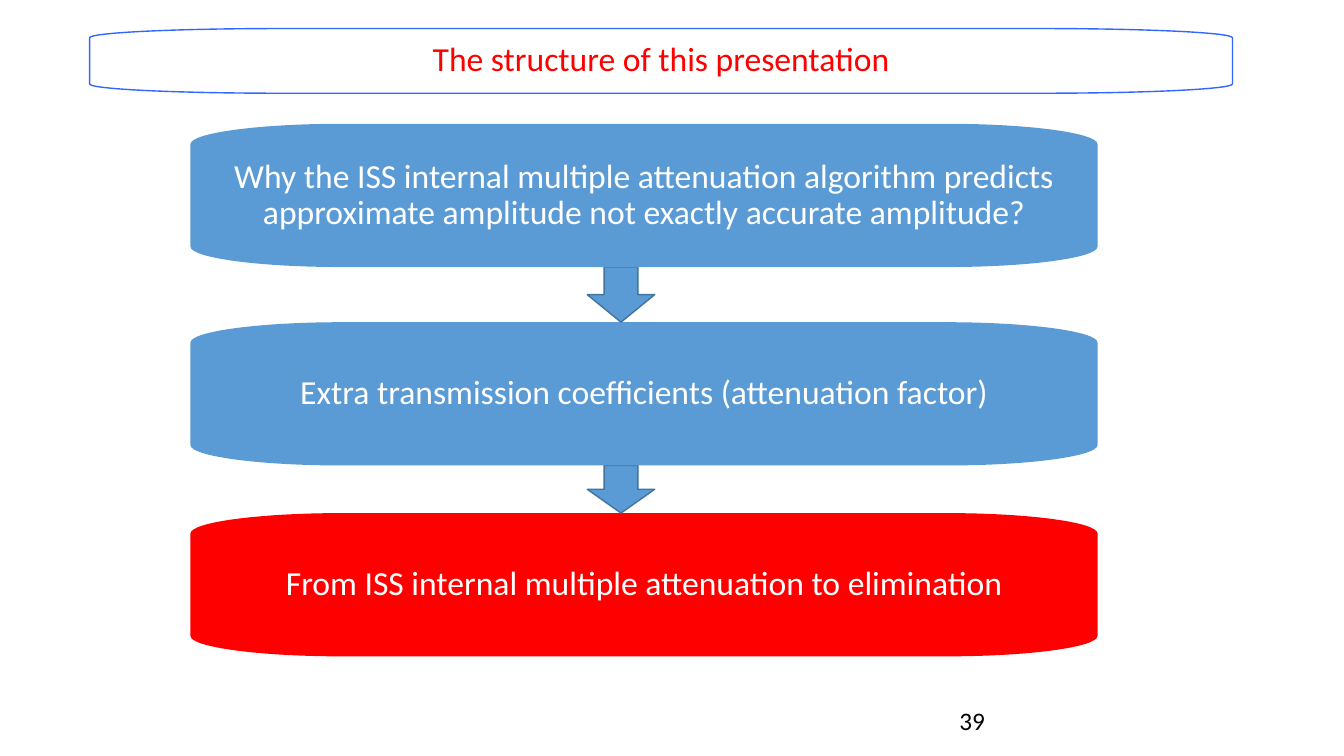
from lxml import etree
from pptx import Presentation
from pptx.dml.color import RGBColor
from pptx.enum import shapes, text
from pptx.oxml import ns
from pptx.util import Cm, Pt

BLUE = RGBColor(0x5B, 0x9B, 0xD5)
EDGE = RGBColor(0x43, 0x73, 0x9E)
FRAME = RGBColor(0x33, 0x66, 0xFF)
RED = RGBColor(0xFF, 0, 0)
WHITE = RGBColor(0xFF, 0xFF, 0xFF)
BLACK = RGBColor(0, 0, 0)

LEFT, WIDTH, HEIGHT = Cm(4.8), Cm(22.86), Cm(3.61)
STEPS = [
    (Cm(3.12), BLUE, "Why the ISS internal multiple attenuation algorithm predicts "
                     "approximate amplitude not exactly accurate amplitude?"),
    (Cm(8.12), BLUE, "Extra transmission coefficients (attenuation factor)"),
    (Cm(12.93), RED, "From ISS internal multiple attenuation to elimination"),
]


def paint(shape, fill, line=None):
    """Set fill and outline, without a shadow."""
    shape.shadow.inherit = False
    shape.fill.solid()
    shape.fill.fore_color.rgb = fill
    if line is None:
        shape.line.fill.background()
    else:
        shape.line.color.rgb = line
        shape.line.width = Pt(1)


def style(para, size, color):
    """Set the font of a paragraph."""
    para.font.name = "Calibri"
    para.font.size = Pt(size)
    para.font.color.rgb = color


def write(shape, words, color):
    """Write one centred paragraph."""
    frame = shape.text_frame
    frame.text = words
    frame.word_wrap = True
    frame.auto_size = text.MSO_AUTO_SIZE.NONE
    frame.vertical_anchor = text.MSO_ANCHOR.MIDDLE
    frame.margin_left = frame.margin_right = Cm(0.38)
    frame.margin_top = frame.margin_bottom = Cm(0.38)
    para = frame.paragraphs[0]
    para.alignment = text.PP_ALIGN.CENTER
    para.line_spacing = 0.9
    style(para, 24, color)


def bend(line, start, corner, end):
    """Turn a straight segment into a quarter ellipse."""
    curve = etree.Element(ns.qn("a:cubicBezTo"))
    pulls = [[round(p + 0.55 * (c - p)) for p, c in zip(point, corner)]
             for point in (start, end)]
    for x, y in (*pulls, end):
        etree.SubElement(curve, ns.qn("a:pt"), x=str(x), y=str(y))
    line.getparent().replace(line, curve)


def add_panel(slide, left, top, width, height, fill, line=None):
    """Draw a panel with wide elliptical corners."""
    rx, ry = round(width / 6), round(height / 7)
    ends = [
        (0, ry), (rx, 0), (width - rx, 0), (width, ry),
        (width, height - ry), (width - rx, height), (rx, height), (0, height - ry),
    ]
    corners = [(0, 0), (width, 0), (width, height), (0, height)]
    maker = slide.shapes.build_freeform(*ends[0])
    maker.add_line_segments(ends[1:], close=True)
    panel = maker.convert_to_shape(left, top)
    lines = list(panel.element.iter(ns.qn("a:lnTo")))
    for seg, start, corner, end in zip(lines[::2], ends[::2], corners, ends[1::2]):
        bend(seg, start, corner, end)
    paint(panel, fill, line)
    return panel


def add_arrow(slide, top, end):
    """Draw a block arrow between two steps."""
    arrow = slide.shapes.add_shape(
        shapes.MSO_SHAPE.DOWN_ARROW, Cm(14.8), top, Cm(1.7), end - top)
    paint(arrow, BLUE, EDGE)


def add_title(slide, words):
    """Fill the title and draw its frame behind it."""
    box = Cm(2.26), Cm(0.72), Cm(28.8), Cm(1.63)
    panel = add_panel(slide, *box, WHITE, FRAME)
    title = slide.shapes.title
    title.left, title.top, title.width, title.height = box
    write(title, words, RED)
    title.element.addprevious(panel.element)


def add_number(slide, words):
    """Write the page number."""
    box = slide.shapes.add_textbox(Cm(23.93), Cm(17.65), Cm(7.62), Cm(1.02))
    box.text_frame.word_wrap = True
    box.text_frame.text = words
    style(box.text_frame.paragraphs[0], 18, BLACK)


def main():
    """Build the slide."""
    deck = Presentation()
    deck.slide_width, deck.slide_height = Cm(33.87), Cm(19.05)
    slide = deck.slides.add_slide(deck.slide_layouts[5])
    add_title(slide, "The structure of this presentation")
    below = None
    for top, fill, words in reversed(STEPS):
        if below is not None:
            add_arrow(slide, top + HEIGHT, below)
        write(add_panel(slide, LEFT, top, WIDTH, HEIGHT, fill), words, WHITE)
        below = top
    add_number(slide, "39")
    deck.save("out.pptx")


if __name__ == "__main__":
    main()
